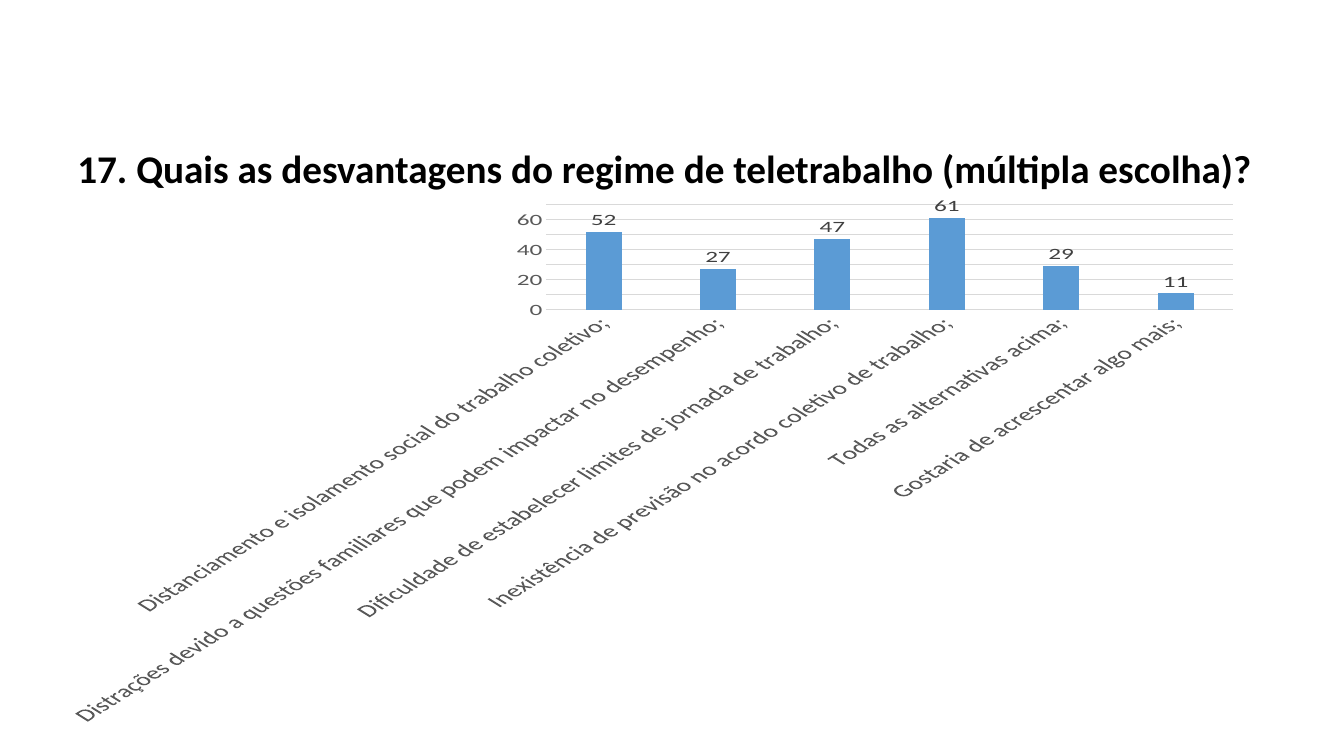
from pptx import Presentation
from pptx.chart.data import CategoryChartData as Data
from pptx.dml.color import RGBColor as Rgb
from pptx.enum.chart import XL_CHART_TYPE as Kind, XL_LABEL_POSITION as Spot, XL_TICK_MARK as Tick
from pptx.enum.text import MSO_ANCHOR as Anchor, MSO_AUTO_SIZE as Fit, PP_ALIGN as Align
from pptx.util import Inches, Pt

HUES = {"ink": "000000", "axis": "595959", "label": "404040", "rule": "D9D9D9", "bar": "5B9BD5"}
FACE = "Calibri"
VOTES = {
    "Distanciamento e isolamento social do trabalho coletivo;": 52,
    "Distrações devido a questões familiares que podem impactar no desempenho;": 27,
    "Dificuldade de estabelecer limites de jornada de trabalho;": 47,
    "Inexistência de previsão no acordo coletivo de trabalho;": 61,
    "Todas as alternativas acima;": 29,
    "Gostaria de acrescentar algo mais;": 11,
}


class Page:
    def __init__(self, deck):
        self.wide, self.high = deck.slide_width, deck.slide_height
        self.slide = deck.slides.add_slide(deck.slide_layouts[0])
        body = self.slide.placeholders[1]
        body.element.getparent().remove(body.element)

    def area(self, left, top, width, height):
        return (int(self.wide * left), int(self.high * top),
                int(self.wide * width), int(self.high * height))

    def style(self, font, size, hue, bold=False):
        font.name, font.size, font.bold = FACE, Pt(size), bold
        font.color.rgb = Rgb.from_string(HUES[hue])

    def rule(self, line):
        line.color.rgb = Rgb.from_string(HUES["rule"])
        line.width = Pt(0.75)

    def title(self, text, box):
        head = self.slide.shapes.title
        head.left, head.top, head.width, head.height = self.area(*box)
        frame = head.text_frame
        frame.text = text
        frame.word_wrap, frame.auto_size = True, Fit.NONE
        frame.vertical_anchor = Anchor.BOTTOM
        para = frame.paragraphs[0]
        para.alignment, para.line_spacing = Align.LEFT, 0.9
        self.style(para.runs[0].font, 28, "ink", True)

    def axis(self, axis, size):
        axis.major_tick_mark = axis.minor_tick_mark = Tick.NONE
        self.style(axis.tick_labels.font, size, "axis")

    def chart(self, votes, box):
        data = Data()
        data.categories = list(votes)
        data.add_series("Series 1", list(votes.values()))
        chart = self.slide.shapes.add_chart(Kind.COLUMN_CLUSTERED, *self.area(*box), data).chart
        self.style(chart.font, 10, "ink")
        chart.has_legend = chart.has_title = False
        cats, vals = chart.category_axis, chart.value_axis
        self.axis(cats, 20)
        self.axis(vals, 18)
        self.rule(cats.format.line)
        vals.format.line.fill.background()
        vals.has_major_gridlines = True
        self.rule(vals.major_gridlines.format.line)
        plot = chart.plots[0]
        plot.gap_width, plot.overlap, plot.vary_by_categories = 219, -27, False
        bars = plot.series[0]
        bars.format.fill.solid()
        bars.format.fill.fore_color.rgb = Rgb.from_string(HUES["bar"])
        tags = bars.data_labels
        tags.show_value, tags.position = True, Spot.OUTSIDE_END
        self.style(tags.font, 18, "label")


def main():
    deck = Presentation()
    deck.slide_width, deck.slide_height = Inches(13.33), Inches(7.5)
    page = Page(deck)
    page.title("17. Quais as desvantagens do regime de teletrabalho (múltipla escolha)?",
               (0.05, 0.188, 0.9, 0.073))
    page.chart(VOTES, (0.05, 0.26, 0.9, 0.7))
    deck.save("out.pptx")


if __name__ == "__main__":
    main()
